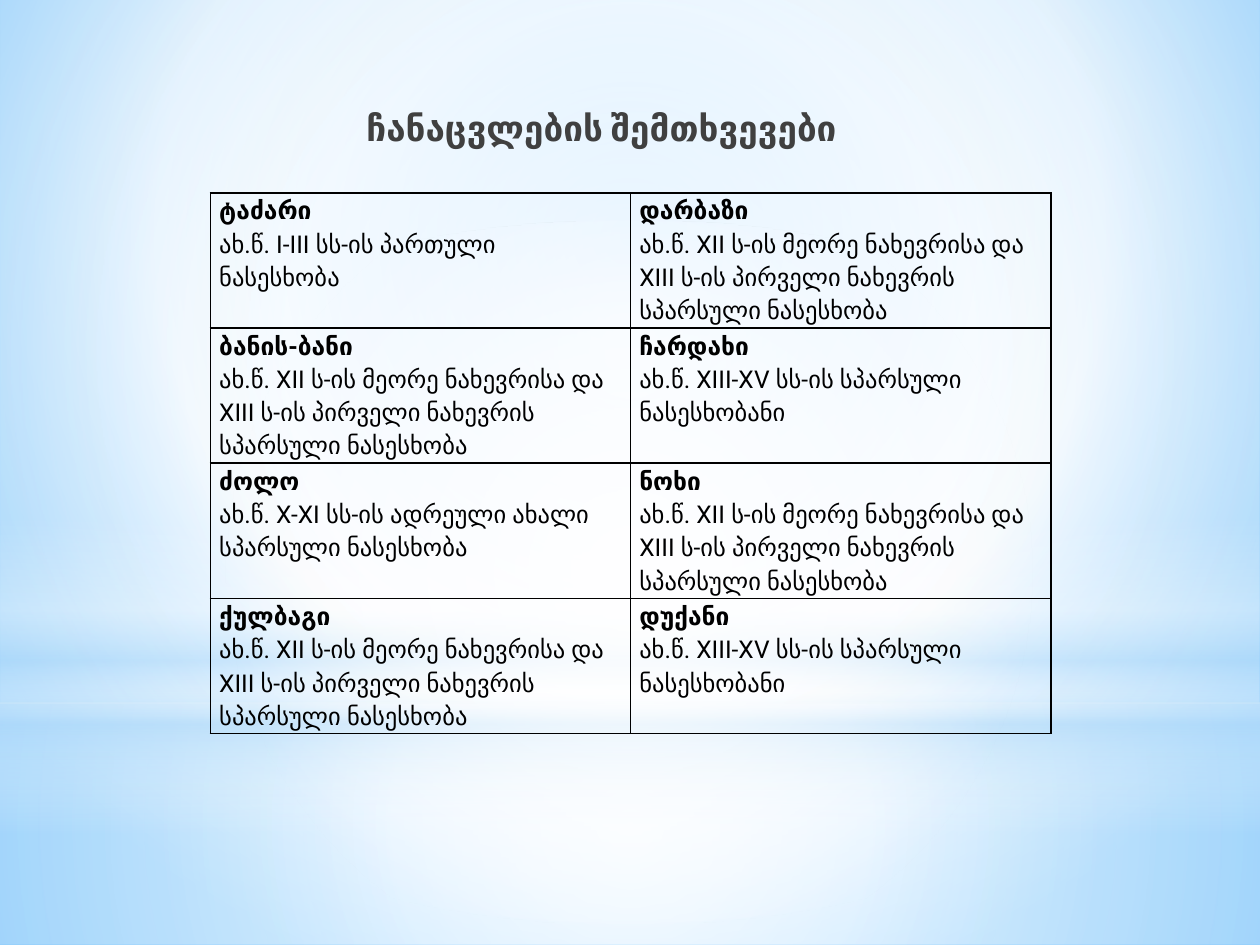
from lxml.etree import SubElement as Sub
from pptx import Presentation
from pptx.dml.color import RGBColor as Rgb
from pptx.enum.shapes import MSO_SHAPE as Kind
from pptx.enum.text import PP_ALIGN as Align
from pptx.oxml.ns import qn
from pptx.util import Inches, Pt

TITLE = "ჩანაცვლების შემთხვევები"
LATE = "ახ.წ. XII ს-ის მეორე ნახევრისა და XIII ს-ის პირველი ნახევრის სპარსული ნასესხობა"
LAST = "ახ.წ. XIII-XV სს-ის სპარსული ნასესხობანი"
ROWS = [
    [("ტაძარი", "ახ.წ. I-III სს-ის პართული ნასესხობა"), ("დარბაზი", LATE)],
    [("ბანის-ბანი", LATE), ("ჩარდახი", LAST)],
    [("ძოლო", "ახ.წ. X-XI სს-ის ადრეული ახალი სპარსული ნასესხობა"), ("ნოხი", LATE)],
    [("ქულბაგი", LATE), ("დუქანი", LAST)],
]
THEME = {
    "head": ("Cabin", 20, "404040"),
    "body": ("Roboto", 14, "000000"),
    "rule": "000000",
    "white": "FFFFFF",
    "mist": "B4DCFA",
    "sky": "9ED5FF",
    "deep": "5BB9FF",
}
MID = (50, 50, 50, 50)
BACK = [(0, "sky", 100), (60, "white", 100), (100, "deep", 100)]
GLOWS = [
    (Kind.RECTANGLE, 5.58, 1.92, MID,
     [(0, "white", 91), (37, "white", 76), (100, "mist", 79)]),
    (Kind.RECTANGLE, 0, 5.58, MID,
     [(0, "white", 89), (48, "white", 62), (100, "mist", 79)]),
    (Kind.RECTANGLE, 4.12, 2.5, None,
     [(0, "white", 0), (29, "white", 30), (45, "mist", 40),
      (55, "white", 26), (65, "mist", 60), (100, "white", 0)]),
    (Kind.OVAL, 1.75, 5.58, MID, [(0, "white", 100), (56, "white", 0)]),
]


def blend(fill, node, stops, focus):
    """Give a fill its colour stops, round a focus or straight down."""
    fill.gradient()
    grad = node.find(qn("a:gradFill"))
    for kid in list(grad):
        grad.remove(kid)
    group = Sub(grad, qn("a:gsLst"))
    for pos, tone, alpha in stops:
        stop = Sub(group, qn("a:gs"), pos=str(pos * 1000))
        color = Sub(stop, qn("a:srgbClr"), val=THEME[tone])
        if alpha < 100:
            Sub(color, qn("a:alpha"), val=str(alpha * 1000))
    if focus:
        ring = Sub(grad, qn("a:path"), {"path": "circle"})
        sides = {side: str(part * 1000) for side, part in zip("ltrb", focus)}
        Sub(ring, qn("a:fillToRect"), sides)
    else:
        Sub(grad, qn("a:lin"), ang="5400000", scaled="0")


def write(para, text, style, bold):
    """Put styled text in a paragraph."""
    para.text = text
    font = para.font
    font.name, size, tone = THEME[style]
    font.size, font.bold = Pt(size), bold
    font.color.rgb = Rgb.from_string(tone)


def frame(cell):
    """Draw the four borders of a cell."""
    cell.fill.background()
    props = cell._tc.get_or_add_tcPr()
    for spot, side in enumerate("LRTB"):
        line = Sub(props, qn(f"a:ln{side}"), w=str(Pt(1)))
        Sub(Sub(line, qn("a:solidFill")), qn("a:srgbClr"), val=THEME["rule"])
        props.insert(spot, line)


def paint(slide):
    """Lay the sky and its glows."""
    fill = slide.background.fill
    blend(fill, slide.element.find(".//" + qn("p:bgPr")), BACK, (20, 10, 20, 60))
    for kind, top, high, focus, stops in GLOWS:
        glow = slide.shapes.add_shape(kind, 0, Inches(top), Inches(10), Inches(high))
        glow.shadow.inherit = False
        glow.line.fill.background()
        blend(glow.fill, glow.element.spPr, stops, focus)


def title(slide):
    """Add the heading."""
    box = slide.shapes.add_textbox(Inches(1.25), Inches(0.8), Inches(7), Inches(0.53))
    box.text_frame.word_wrap = True
    para = box.text_frame.paragraphs[0]
    write(para, TITLE, "head", True)
    para.alignment = Align.CENTER
    para.space_before, para.space_after = Pt(4), Pt(3)
    para._p.get_or_add_pPr().set("marL", str(Inches(0.05)))


def grid(slide):
    """Add the table of word pairs."""
    table = slide.shapes.add_table(
        len(ROWS), 2, Inches(1.67), Inches(1.53), Inches(6.67), Inches(4.2)).table
    table.first_row = table.horz_banding = False
    for r, row in enumerate(ROWS):
        for c, (word, note) in enumerate(row):
            cell = table.cell(r, c)
            cell.margin_left = cell.margin_right = Inches(0.07)
            cell.margin_top = cell.margin_bottom = 0
            text = cell.text_frame
            write(text.paragraphs[0], word, "body", True)
            write(text.add_paragraph(), note, "body", False)
            for para in text.paragraphs:
                para.line_spacing = 1.15
            frame(cell)


def main():
    """Build and save the slide."""
    deck = Presentation()
    deck.slide_width, deck.slide_height = Inches(10), Inches(7.5)
    slide = deck.slides.add_slide(deck.slide_layouts[6])
    paint(slide)
    title(slide)
    grid(slide)
    deck.save("out.pptx")


if __name__ == "__main__":
    main()
